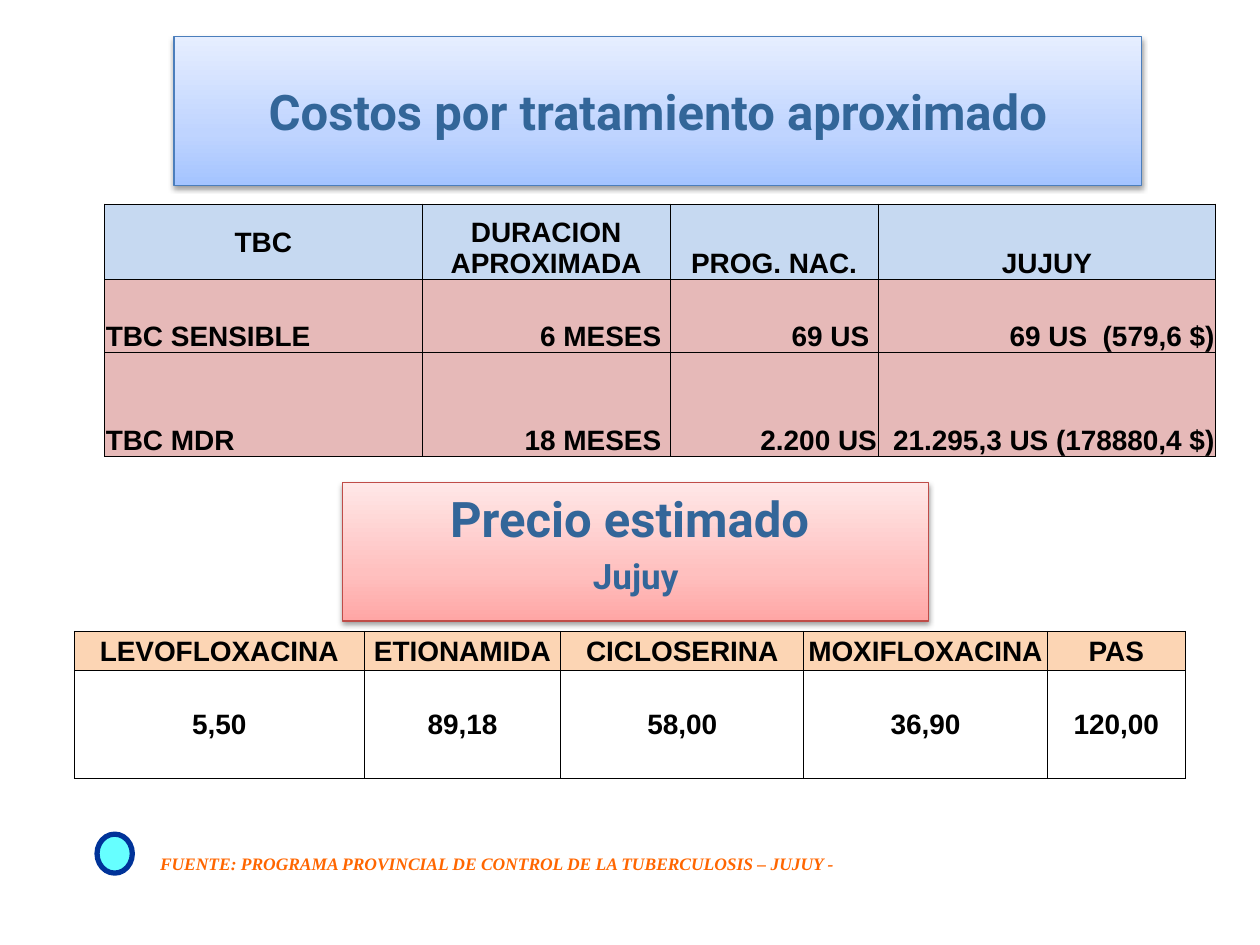
from lxml import etree
from pptx import Presentation
from pptx.dml.color import RGBColor
from pptx.enum.shapes import MSO_SHAPE
from pptx.enum.text import MSO_ANCHOR, PP_ALIGN
from pptx.oxml import parse_xml
from pptx.util import Inches, Pt

LEFT, CENTER, RIGHT = PP_ALIGN.LEFT, PP_ALIGN.CENTER, PP_ALIGN.RIGHT
TOP, MIDDLE, BOTTOM = MSO_ANCHOR.TOP, MSO_ANCHOR.MIDDLE, MSO_ANCHOR.BOTTOM
NS = 'xmlns:a="http://schemas.openxmlformats.org/drawingml/2006/main"'

# Each banner: place, gradient from bottom to top, line, anchor, indent, (text, size) lines
BANNERS = [
    dict(at=(1.38, 0.29, 7.68, 1.18), stops=("A4C4FF", "BFD4FF", "E6EEFF"), line="4B7EBC",
         anchor=MIDDLE, indent=0, lines=[("Costos por tratamiento aproximado", 28)]),
    dict(at=(2.72, 3.83, 4.65, 1.1), stops=("FFA6A5", "FFC0BF", "FFE7E7"), line="BF4C48",
         anchor=TOP, indent=0.38, lines=[("Precio estimado ", 28), ("Jujuy", 20)]),
]
STOP_POSITIONS = (0, 35, 100)

COSTS = dict(
    at=(0.83, 1.62), columns=(2.52, 1.97, 1.65, 2.68), heights=(0.6, 0.58, 0.82),
    fills=("C6D9F1", "E6B9B8", "E6B9B8"), anchor=BOTTOM, body_align=(LEFT, RIGHT, RIGHT, RIGHT),
    rows=[
        ("TBC", "DURACION APROXIMADA", "PROG. NAC.", "JUJUY"),
        ("TBC SENSIBLE", "6 MESES ", "69 US ", "69 US  (579,6 $)"),
        ("TBC MDR", "18 MESES ", "2.200 US", "21.295,3 US (178880,4 $)"),
    ])
PRICES = dict(
    at=(0.59, 5.01), columns=(2.3, 1.56, 1.93, 1.93, 1.1), heights=(0.31, 0.86),
    fills=("FCD5B4", None), anchor=MIDDLE, body_align=(CENTER,) * 5,
    rows=[
        ("LEVOFLOXACINA", "ETIONAMIDA", "CICLOSERINA", "MOXIFLOXACINA", "PAS"),
        ("5,50", "89,18", "58,00", "36,90", "120,00"),
    ])
SOURCE = "FUENTE: PROGRAMA PROVINCIAL DE CONTROL DE LA TUBERCULOSIS – JUJUY -"


def color(value):
    return RGBColor.from_string(value)


def set_font(paragraph, name, size, value, italic=False):
    font = paragraph.font
    font.name, font.size, font.bold, font.italic = name, Pt(size), True, italic
    font.color.rgb = color(value)


def add_banner(page, at, stops, line, anchor, indent, lines):
    box = page.shapes.add_shape(MSO_SHAPE.RECTANGLE, *map(Inches, at))
    properties = box._element.spPr
    marks = "".join(f'<a:gs pos="{position * 1000}"><a:srgbClr val="{stop}"/></a:gs>'
                    for position, stop in zip(STOP_POSITIONS, stops))
    properties.append(parse_xml(
        f'<a:gradFill {NS} rotWithShape="1"><a:gsLst>{marks}</a:gsLst>'
        '<a:lin ang="16200000" scaled="0"/></a:gradFill>'))
    box.line.color.rgb = color(line)
    box.line.width = Pt(0.75)
    properties.append(parse_xml(
        f'<a:effectLst {NS}><a:outerShdw blurRad="{Pt(3.1)}" dist="{Pt(1.6)}" dir="5400000" '
        'rotWithShape="0"><a:srgbClr val="000000"><a:alpha val="38000"/></a:srgbClr>'
        '</a:outerShdw></a:effectLst>'))
    frame = box.text_frame
    frame.word_wrap = True
    frame.vertical_anchor = anchor
    for index, (text, size) in enumerate(lines):
        paragraph = frame.add_paragraph() if index else frame.paragraphs[0]
        paragraph.text = text
        paragraph.alignment = CENTER
        set_font(paragraph, "Roboto", size, "336699")
        if indent:
            paragraph.space_before = Pt(size * 0.2)
            settings = paragraph._p.get_or_add_pPr()
            settings.set("marL", str(Inches(indent)))
            settings.set("indent", str(-Inches(indent)))


def add_borders(cell):
    properties = cell._tc.get_or_add_tcPr()
    for index, side in enumerate(("lnL", "lnR", "lnT", "lnB")):
        properties.insert(index, parse_xml(
            f'<a:{side} {NS} w="{Pt(0.5)}"><a:solidFill><a:srgbClr val="000000"/>'
            f'</a:solidFill></a:{side}>'))


def add_grid(page, at, columns, heights, fills, anchor, body_align, rows):
    table = page.shapes.add_table(len(rows), len(columns), *map(
        Inches, (*at, sum(columns), sum(heights)))).table
    for column, width in zip(table.columns, columns):
        column.width = Inches(width)
    for r, (texts, height, fill) in enumerate(zip(rows, heights, fills)):
        table.rows[r].height = Inches(height)
        for c, text in enumerate(texts):
            cell = table.cell(r, c)
            cell.margin_left = cell.margin_right = cell.margin_top = Inches(0.01)
            cell.margin_bottom = 0
            cell.vertical_anchor = MIDDLE if r == c == 0 else anchor
            if fill:
                cell.fill.solid()
                cell.fill.fore_color.rgb = color(fill)
            else:
                cell.fill.background()
            add_borders(cell)
            paragraph = cell.text_frame.paragraphs[0]
            paragraph.text = text
            paragraph.alignment = body_align[c] if r else CENTER
            set_font(paragraph, "Arial", 16, "000000")


def add_source(page):
    box = page.shapes.add_textbox(*map(Inches, (1.27, 6.77, 5.39, 0.17)))
    frame = box.text_frame
    frame.word_wrap = False
    frame.margin_left = frame.margin_right = frame.margin_top = frame.margin_bottom = 0
    paragraph = frame.paragraphs[0]
    paragraph.text = SOURCE
    set_font(paragraph, "Times New Roman", 10, "FF6600", italic=True)


def add_emblem(page):
    emblem = page.shapes.add_shape(MSO_SHAPE.OVAL, *map(Inches, (0.77, 6.62, 0.28, 0.31)))
    emblem.shadow.inherit = False
    emblem.fill.solid()
    emblem.fill.fore_color.rgb = color("66FFFF")
    emblem.line.color.rgb = color("003399")
    emblem.line.width = Pt(3)


def main():
    deck = Presentation()
    deck.slide_width, deck.slide_height = Inches(10), Inches(7.5)
    page = deck.slides.add_slide(deck.slide_layouts[6])
    for banner in BANNERS:
        add_banner(page, **banner)
    for grid in (COSTS, PRICES):
        add_grid(page, **grid)
    add_source(page)
    add_emblem(page)
    deck.save("out.pptx")


if __name__ == "__main__":
    main()
